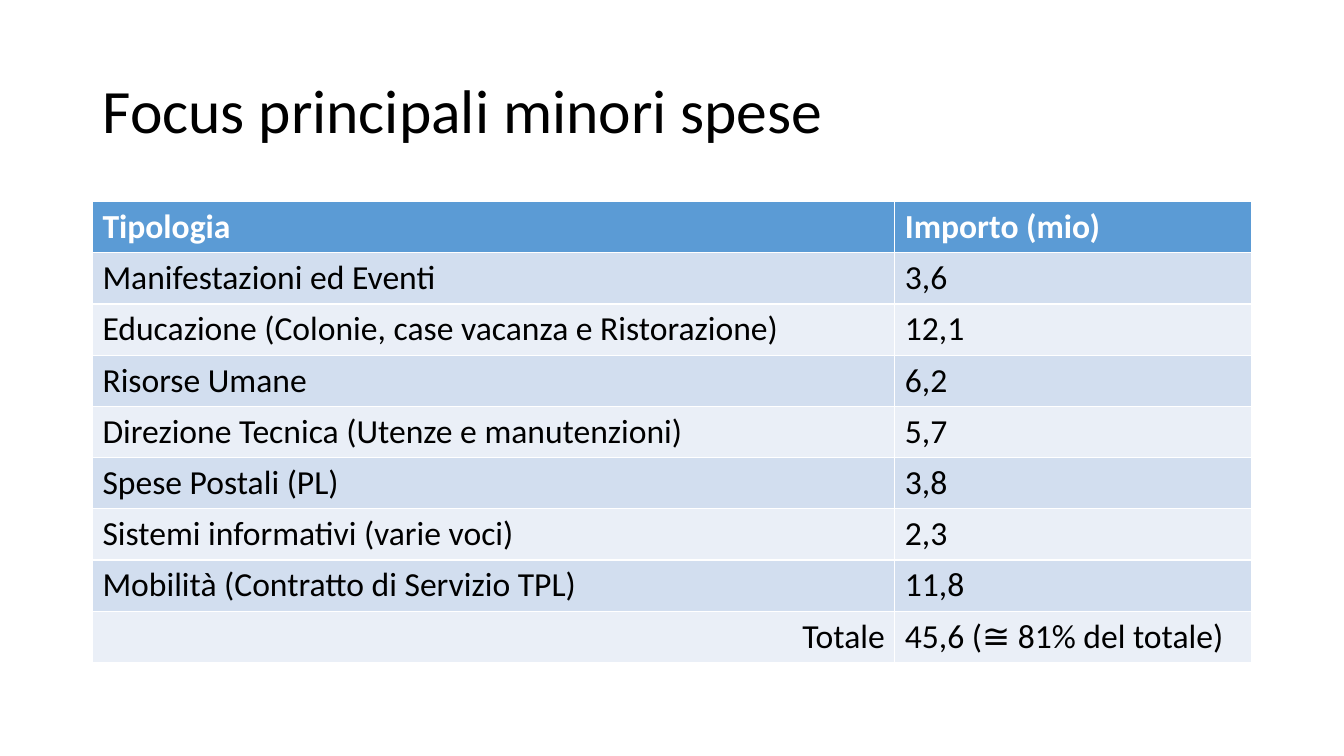
from pptx import Presentation
from pptx.dml.color import RGBColor
from pptx.enum.text import MSO_ANCHOR, PP_ALIGN
from pptx.util import Cm, Pt

FONT = "Calibri"
BLACK = RGBColor(0x00, 0x00, 0x00)
WHITE = RGBColor(0xFF, 0xFF, 0xFF)
HEADER_BLUE = RGBColor(0x5B, 0x9B, 0xD5)
BAND_DARK = RGBColor(0xD2, 0xDE, 0xEF)
BAND_LIGHT = RGBColor(0xEA, 0xEF, 0xF7)

LEFT, WIDTH = Cm(2.33), Cm(29.21)
COLUMN_WIDTHS = (Cm(20.22), Cm(8.99))
ROW_HEIGHT = Cm(1.29)

HEADER_FORMAT = {"name": FONT, "size": Pt(24), "bold": True}
BODY_FORMAT = {**HEADER_FORMAT, "bold": False}
TITLE_FORMAT = {**BODY_FORMAT, "size": Pt(44)}

EXPENSES = [
    ("Tipologia", "Importo (mio)"),
    ("Manifestazioni ed Eventi", "3,6"),
    ("Educazione (Colonie, case vacanza e Ristorazione)", "12,1"),
    ("Risorse Umane", "6,2"),
    ("Direzione Tecnica (Utenze e manutenzioni)", "5,7"),
    ("Spese Postali (PL)", "3,8"),
    ("Sistemi informativi (varie voci)", "2,3"),
    ("Mobilità (Contratto di Servizio TPL)", "11,8"),
    ("Totale", "45,6 (≅ 81% del totale)"),
]


def write_text(p, text, color, text_format, align=PP_ALIGN.LEFT):
    p.alignment = align
    r = p.add_run()
    r.text = text
    for name, value in text_format.items():
        setattr(r.font, name, value)
    r.font.color.rgb = color


def set_title(s, text):
    title = s.shapes.title
    title.left, title.top, title.width, title.height = LEFT, Cm(1.01), WIDTH, Cm(3.68)
    tf = title.text_frame
    tf.vertical_anchor = MSO_ANCHOR.MIDDLE
    p = tf.paragraphs[0]
    p.line_spacing = 0.9
    write_text(p, text, BLACK, TITLE_FORMAT)


def fill_cell(cell, text, fill, color, text_format, align):
    cell.fill.solid()
    cell.fill.fore_color.rgb = fill
    write_text(cell.text_frame.paragraphs[0], text, color, text_format, align)


def add_expense_table(s, rows):
    """Add a table with a header, alternating bands and a total label set right."""
    table = s.shapes.add_table(len(rows), len(COLUMN_WIDTHS), LEFT, Cm(5.08),
                               WIDTH, ROW_HEIGHT * len(rows)).table
    for column, width in zip(table.columns, COLUMN_WIDTHS):
        column.width = width
    for i, row in enumerate(rows):
        if i == 0:
            fill, color, text_format = HEADER_BLUE, WHITE, HEADER_FORMAT
        else:
            fill = BAND_DARK if i % 2 else BAND_LIGHT
            color, text_format = BLACK, BODY_FORMAT
        for j, text in enumerate(row):
            is_total_label = i == len(rows) - 1 and j == 0
            align = PP_ALIGN.RIGHT if is_total_label else PP_ALIGN.LEFT
            fill_cell(table.cell(i, j), text, fill, color, text_format, align)


def main():
    prs = Presentation()
    prs.slide_width, prs.slide_height = Cm(33.87), Cm(19.05)
    s = prs.slides.add_slide(prs.slide_layouts[5])
    set_title(s, "Focus principali minori spese")
    add_expense_table(s, EXPENSES)
    prs.save("out.pptx")


if __name__ == "__main__":
    main()
